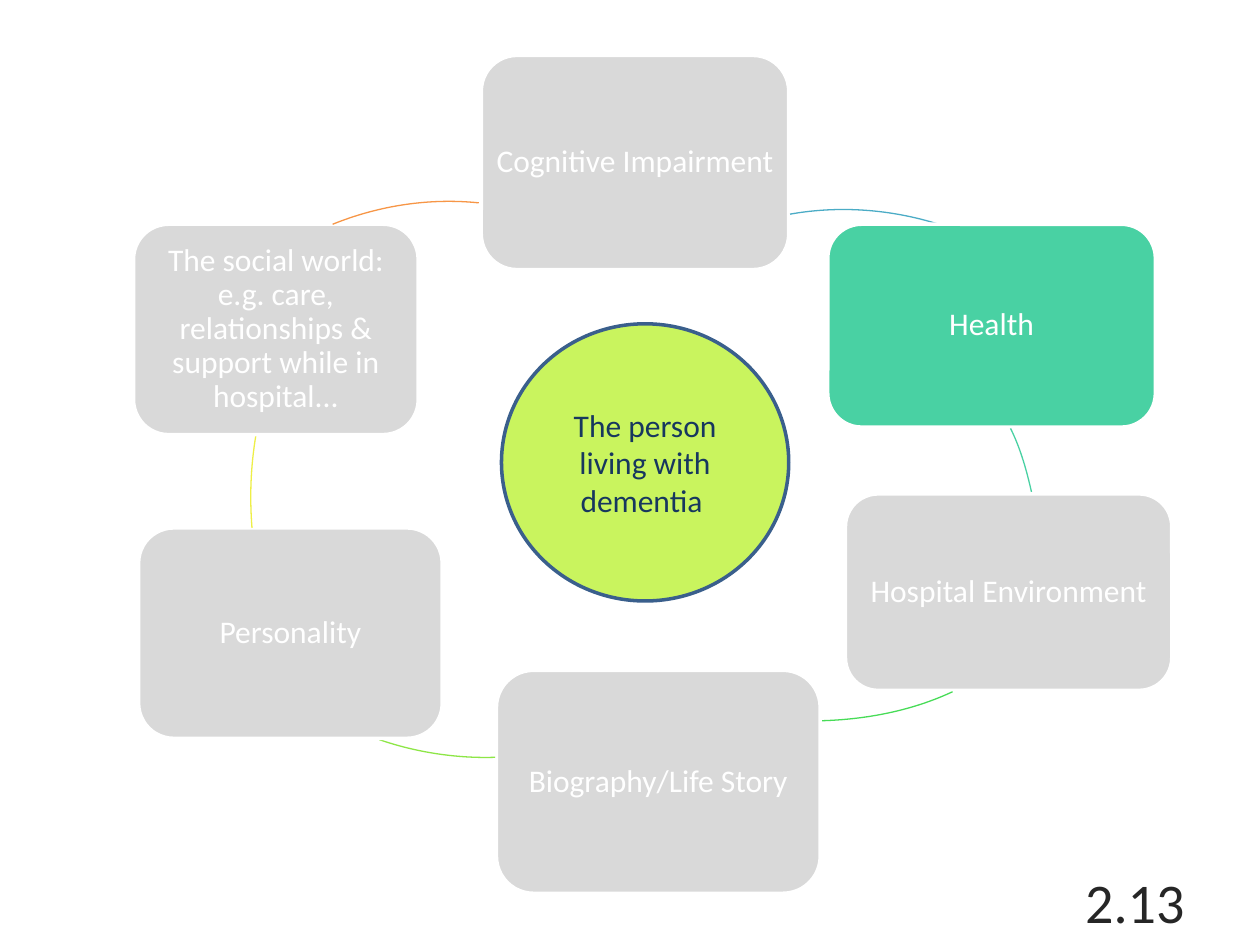
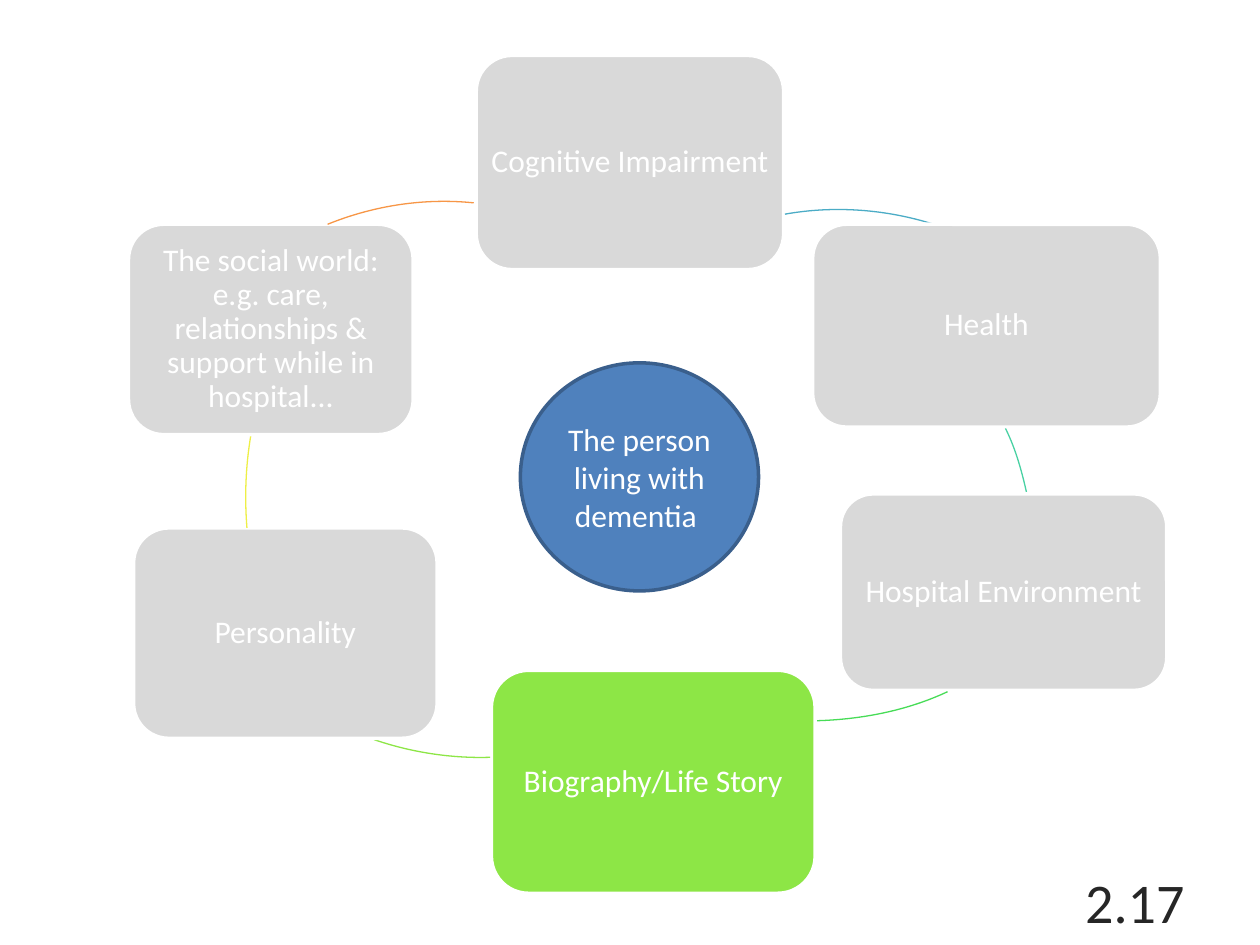
from lxml import etree
from pptx import Presentation
from pptx.dml.color import RGBColor
from pptx.enum.shapes import MSO_SHAPE
from pptx.enum.text import MSO_ANCHOR, PP_ALIGN
from pptx.oxml.ns import qn
from pptx.util import Inches, Pt

ROUND, OVAL = MSO_SHAPE.ROUNDED_RECTANGLE, MSO_SHAPE.OVAL
MIDDLE = MSO_ANCHOR.MIDDLE
CENTER, RIGHT = PP_ALIGN.CENTER, PP_ALIGN.RIGHT

HUES = {
    "white": "FFFFFF", "grey": "D9D9D9", "ink": "262626", "navy": "17375E",
    "blue": "4F81BD", "rim": "3A5F8C", "lime": "C9F45E", "sky": "4BACC6",
    "teal": "49D1A3", "green": "47DC57", "leaf": "8DE646",
    "yellow": "EEEF46", "orange": "F79646",
}
FONT = "Calibri"
SPAN = Inches(5.29)  # side of the square that frames each arc's full circle

# Ring of factors: text, box, then the arc that follows it
# (colour, left and top of its frame, Bezier points on the slide)
RING = [
    ("Cognitive Impairment", (3.82, 0.44, 2.44, 1.7), "sky", (4.04, 1.66),
     [(6.27, 1.7), (6.66, 1.63), (7.07, 1.66), (7.45, 1.78)]),
    ("Health", (6.57, 1.78, 2.6, 1.61), "teal", (2.95, 1.8),
     [(8.02, 3.4), (8.1, 3.56), (8.15, 3.74), (8.19, 3.92)]),
    ("Hospital Environment", (6.71, 3.92, 2.59, 1.56), "green", (3.84, 0.43),
     [(7.56, 5.49), (7.24, 5.64), (6.88, 5.71), (6.52, 5.72)]),
    ("Biography/Life Story", (3.94, 5.32, 2.57, 1.77), "leaf", (1.2, 0.72),
     [(3.93, 6.01), (3.62, 6.02), (3.3, 5.97), (3.01, 5.87)]),
    ("Personality", (1.1, 4.19, 2.41, 1.67), "yellow", (1.99, 1.32),
     [(2, 4.19), (1.98, 3.94), (1.99, 3.7), (2.03, 3.46)]),
    ("The social world: e.g. care, relationships & support while in hospital...",
     (1.06, 1.78, 2.26, 1.67), "orange", (0.96, 1.6),
     [(2.64, 1.78), (3.01, 1.63), (3.41, 1.57), (3.8, 1.61)]),
]

# Slides: number, ring shift, extra Health width, lit box and its colour,
# centre circle, its fill and text colour
SLIDES = [
    ("2.13", 0, 0, "Health", "teal", (3.98, 2.57, 2.28, 2.2), "lime", "navy"),
    ("2.17", -0.04, 0.16, "Biography/Life Story", "leaf",
     (4.13, 2.88, 1.89, 1.81), "blue", "white"),
]


def write(shape, text, size, hue, align):
    frame = shape.text_frame
    frame.word_wrap = True
    frame.vertical_anchor = MIDDLE
    para = frame.paragraphs[0]
    para.text = text
    para.alignment = align
    para.font.name = FONT
    para.font.size = Pt(size)
    para.font.color.rgb = RGBColor.from_string(HUES[hue])
    return frame


def paint(shape, fill, line, width):
    shape.shadow.inherit = False
    if fill:
        shape.fill.solid()
        shape.fill.fore_color.rgb = RGBColor.from_string(HUES[fill])
    else:
        shape.fill.background()
    shape.line.color.rgb = RGBColor.from_string(HUES[line])
    shape.line.width = Pt(width)


prs = Presentation()
prs.slide_width, prs.slide_height = Inches(10), Inches(7.5)

for number, shift, extra, lit, glow, disc, fill, ink in SLIDES:
    shapes = prs.slides.add_slide(prs.slide_layouts[6]).shapes

    for label, (left, top, width, height), hue, (x0, y0), ctrl in RING:
        # Factor box; Health grows evenly to both sides
        grow = extra if label == "Health" else 0
        box = shapes.add_shape(
            ROUND, Inches(left + shift - grow / 2), Inches(top),
            Inches(width + grow), Inches(height))
        paint(box, glow if label == lit else "grey", "white", 2)
        frame = write(box, label, 18, "white", CENTER)
        frame.paragraphs[0].line_spacing = 0.9
        # The rounded corners already inset the text
        frame.margin_left = frame.margin_right = 0
        frame.margin_top = frame.margin_bottom = 0

        # Arc to the next box: a Bezier curve inside its circle's frame
        dots = [(Inches(x - x0), Inches(y - y0)) for x, y in ctrl]
        pen = shapes.build_freeform(*dots[0])
        pen.add_line_segments(dots[1:], close=False)
        arc = pen.convert_to_shape()
        arc.left, arc.top = Inches(x0 + shift), Inches(y0)
        arc.width = arc.height = SPAN
        route = next(arc.element.iter(qn("a:path")))
        route.set("w", str(SPAN))
        route.set("h", str(SPAN))
        for part in list(route):
            route.remove(part)
        for tag, points in (("a:moveTo", dots[:1]), ("a:cubicBezTo", dots[1:])):
            move = etree.SubElement(route, qn(tag))
            for x, y in points:
                etree.SubElement(move, qn("a:pt"), x=str(x), y=str(y))
        paint(arc, None, hue, 0.75)

    # Person in the centre
    core = shapes.add_shape(OVAL, *map(Inches, disc))
    paint(core, fill, "rim", 2)
    write(core, "The person living with dementia ", 18, ink, CENTER)

    # Slide number
    note = shapes.add_textbox(*map(Inches, (7.17, 6.95, 2.33, 0.4)))
    write(note, number, 32, "ink", RIGHT)

prs.save("out.pptx")
